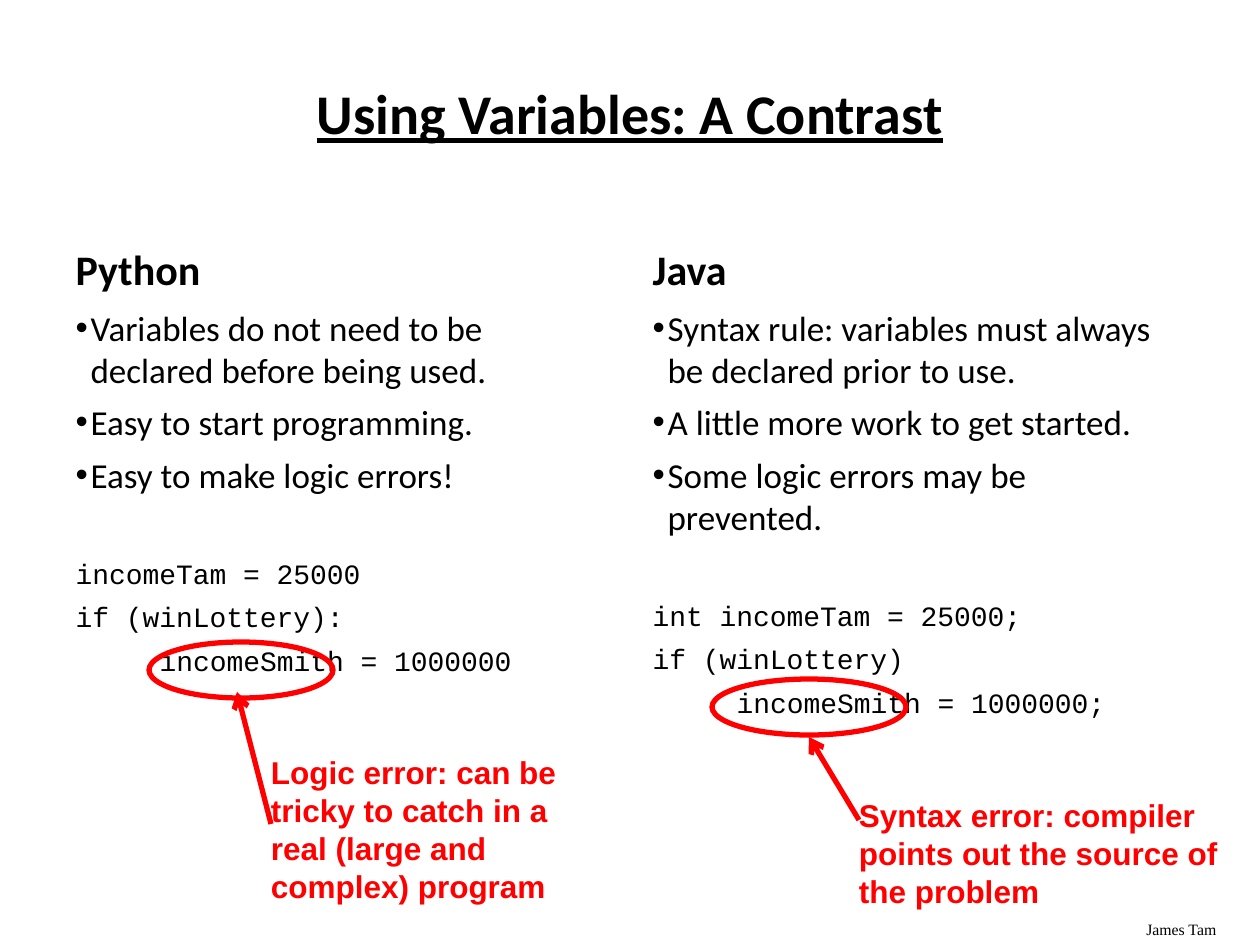
from lxml.etree import SubElement
from pptx import Presentation
from pptx.dml.color import RGBColor
from pptx.enum.shapes import MSO_CONNECTOR, MSO_SHAPE
from pptx.enum.text import MSO_ANCHOR, MSO_AUTO_SIZE, PP_ALIGN
from pptx.oxml.ns import qn
from pptx.util import Pt

# Content: one entry per language; code lines are (indent in characters, text)
TITLE = "Using Variables: A Contrast"
AUTHOR = "James Tam"
COLUMNS = [
    {
        "heading": "Python",
        "points": ["Variables do not need to be declared before being used.",
                   "Easy to start programming.",
                   "Easy to make logic errors!"],
        "code": [(0, "incomeTam = 25000"),
                 (0, "if (winLottery):"),
                 (5, "incomeSmith = 1000000")],
        "left": 63, "body_height": 389,
        "ellipse": (149, 642, 184, 56),
        "arrow": (271, 824, 237, 692),
        "note": "Logic error: can be tricky to catch in a real (large and complex) program",
        "note_box": (271, 747, 343, 155),
    },
    {
        "heading": "Java",
        "points": ["Syntax rule: variables must always be declared prior to use.",
                   "A little more work to get started.",
                   "Some logic errors may be prevented."],
        "code": [(0, "int incomeTam = 25000;"),
                 (0, "if (winLottery)"),
                 (5, "incomeSmith = 1000000;")],
        "left": 640, "body_height": 438,
        "ellipse": (712, 679, 194, 56),
        "arrow": (859, 820, 809, 737),
        "note": "Syntax error: compiler points out the source of the problem",
        "note_box": (859, 790, 401, 155),
    },
]

THEME = {
    "text": RGBColor(0, 0, 0), "accent": RGBColor(255, 0, 0),
    "sans": "Calibri", "note": "Arial", "code": "Courier New", "serif": "Times New Roman",
    "title_size": 32, "heading_size": 24, "point_size": 20,
    "note_size": 18, "code_size": 16, "author_size": 9, "line_width": 3,
}

# Layout in px, 126 to the inch
PX = 914400 / 126
COLUMN_WIDTH = 557
HEADING_TOP, HEADING_HEIGHT = 212, 88
BODY_TOP = HEADING_TOP + HEADING_HEIGHT
HANG = 15
CODE_CHARACTER = 16.8
POINT_GAP, CODE_GAP, CODE_BREAK = 6, 5.5, 35


def px(value):
    return round(value * PX)


def place(shape, left, top, width, height):
    shape.left, shape.top, shape.width, shape.height = map(px, (left, top, width, height))


def prepare(shape, box, anchor=MSO_ANCHOR.TOP):
    place(shape, *box)
    frame = shape.text_frame
    frame.word_wrap = True
    frame.auto_size = MSO_AUTO_SIZE.NONE
    frame.vertical_anchor = anchor
    return frame


def write(frame, text, font, size, color=THEME["text"], bold=False, underline=False,
          align=PP_ALIGN.LEFT, before=0, spacing=1.0, bullet=False, indent=0):
    paragraph = frame.paragraphs[0]
    if paragraph.runs:
        paragraph = frame.add_paragraph()
    paragraph.alignment = align
    paragraph.space_before = Pt(before)
    paragraph.line_spacing = spacing
    properties = paragraph._p.get_or_add_pPr()
    properties.set("marL", str(px(HANG if bullet else indent)))
    properties.set("indent", str(px(-HANG if bullet else 0)))
    if bullet:
        SubElement(properties, qn("a:buFont"), typeface="Arial")
        SubElement(properties, qn("a:buChar"), char="•")
    else:
        SubElement(properties, qn("a:buNone"))
    run = paragraph.add_run()
    run.text = text
    run.font.name, run.font.size = font, Pt(size)
    run.font.bold, run.font.underline = bold, underline
    run.font.color.rgb = color


def style_line(shape):
    shape.line.color.rgb = THEME["accent"]
    shape.line.width = Pt(THEME["line_width"])


def add_column(slide, column, heading, body):
    left = column["left"]
    frame = prepare(heading, (left, HEADING_TOP, COLUMN_WIDTH, HEADING_HEIGHT),
                    MSO_ANCHOR.BOTTOM)
    write(frame, column["heading"], THEME["sans"], THEME["heading_size"], bold=True)

    # Bullet points, then code after a wider gap
    frame = prepare(body, (left, BODY_TOP, COLUMN_WIDTH, column["body_height"]))
    for index, point in enumerate(column["points"]):
        write(frame, point, THEME["sans"], THEME["point_size"], bullet=True,
              before=POINT_GAP if index else 0)
    for index, (depth, line) in enumerate(column["code"]):
        write(frame, line, THEME["code"], THEME["code_size"],
              before=CODE_GAP if index else CODE_BREAK, indent=depth * CODE_CHARACTER)

    # Ring around the faulty name, with an arrow from its note
    ring = slide.shapes.add_shape(MSO_SHAPE.OVAL, *map(px, column["ellipse"]))
    ring.shadow.inherit = False
    ring.fill.background()
    style_line(ring)
    arrow = slide.shapes.add_connector(MSO_CONNECTOR.STRAIGHT, *map(px, column["arrow"]))
    style_line(arrow)
    SubElement(arrow.line._get_or_add_ln(), qn("a:tailEnd"), type="arrow")
    SubElement(arrow._element.spPr, qn("a:effectLst"))
    note = slide.shapes.add_textbox(0, 0, 0, 0)
    frame = prepare(note, column["note_box"])
    frame.margin_left = 0
    write(frame, column["note"], THEME["note"], THEME["note_size"],
          color=THEME["accent"], bold=True)


def main():
    presentation = Presentation()
    presentation.slide_width, presentation.slide_height = px(1260), px(945)
    comparison = presentation.slide_layouts.get_by_name("Comparison")
    slide = presentation.slides.add_slide(comparison)
    title, *placeholders = slide.placeholders

    # Author line and title
    author = slide.shapes.add_textbox(0, 0, 0, 0)
    write(prepare(author, (1134, 914, 126, 31)), AUTHOR, THEME["serif"], THEME["author_size"])
    write(prepare(title, (63, 38, 1134, 157), MSO_ANCHOR.MIDDLE), TITLE, THEME["sans"],
          THEME["title_size"], bold=True, underline=True, align=PP_ALIGN.CENTER, spacing=0.9)

    # Each language takes one heading and one body placeholder
    for column, heading, body in zip(COLUMNS, placeholders[::2], placeholders[1::2]):
        add_column(slide, column, heading, body)
    presentation.save("out.pptx")


if __name__ == "__main__":
    main()
